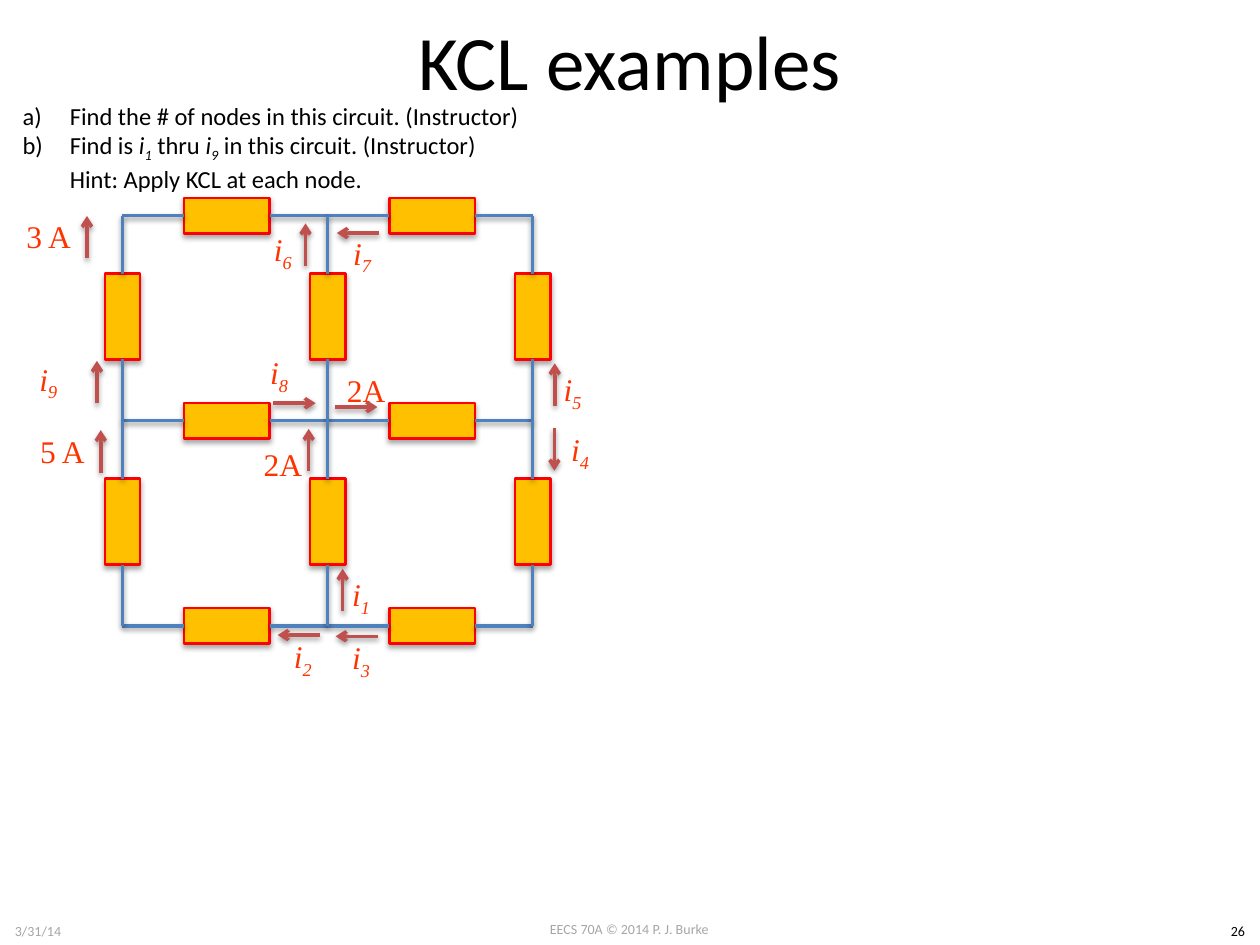
from dataclasses import dataclass

from pptx import Presentation, oxml
from pptx import util as u
from pptx.dml import color
from pptx.enum import shapes, text
from pptx.oxml import ns

COLUMNS = [70 + 117.2 * step for step in range(3)]
ROWS = [123.2 + 117.2 * step for step in range(3)]
RESISTOR_LENGTH, RESISTOR_WIDTH = 49, 20.2
GAP_BEFORE = {"across": 35.2, "down": 33.2}
ARROW_LENGTH = 24.2
DIRECTIONS = {"up": (0, -1), "down": (0, 1), "left": (-1, 0), "right": (1, 0)}
CENTER, MIDDLE = text.PP_ALIGN.CENTER, text.MSO_ANCHOR.MIDDLE


@dataclass
class Span:
    words: str
    italic: bool = False
    lowered: bool = False


@dataclass
class Current:
    name: str
    subscript: str
    label: tuple[float, float]
    tail: tuple[float, float]
    direction: str


CURRENTS = [
    Current("3 A", "", (5.8, 117.4), (49.7, 147.6), "up"),
    Current("5 A", "", (13.7, 240.5), (57.6, 270), "up"),
    Current("i", "9", (0, 195.8), (55.4, 230.4), "up"),
    Current("i", "8", (131.8, 192.2), (156.2, 230.4), "right"),
    Current("i", "7", (179.3, 123.8), (216.7, 133.2), "left"),
    Current("2A", "", (139.7, 247.7), (176.4, 269.3), "up"),
    Current("2A", "", (187.2, 205.2), (191.5, 232.6), "right"),
    Current("i", "6", (133.9, 121.7), (174.6, 151.9), "up"),
    Current("i", "5", (299.5, 201.6), (317, 231.8), "up"),
    Current("i", "4", (303.8, 236.2), (316.8, 244.8), "down"),
    Current("i", "3", (178.6, 355), (216, 363.6), "left"),
    Current("i", "2", (145.4, 354.2), (182.9, 362.9), "left"),
    Current("i", "1", (178.6, 319), (195.8, 349.2), "up"),
]
QUESTIONS = [
    [Span("Find the # of nodes in this circuit. (Instructor)")],
    [
        Span("Find is "), Span("i", True), Span("1", True, True),
        Span(" thru "), Span("i", True), Span("9", True, True),
        Span(" in this circuit. (Instructor) \nHint: Apply KCL at each node."),
    ],
]


def rgb(value: str) -> color.RGBColor:
    return color.RGBColor.from_string(value)


def points(*values: float) -> list[u.Pt]:
    return [u.Pt(value) for value in values]


def set_values(target, values: dict) -> None:
    for name, value in values.items():
        setattr(target, name, value)


def add_shadow(item, distance: float, opacity: int) -> None:
    item._element.spPr.append(oxml.parse_xml(
        f'<a:effectLst {ns.nsdecls("a")}><a:outerShdw blurRad="{u.Pt(3.1)}" '
        f'dist="{u.Pt(distance)}" dir="5400000" rotWithShape="0">'
        f'<a:srgbClr val="000000"><a:alpha val="{opacity * 1000}"/></a:srgbClr>'
        '</a:outerShdw></a:effectLst>'))


def add_line(container, start: tuple, end: tuple, line_color: str, arrow: bool = False):
    line = container.shapes.add_connector(
        shapes.MSO_CONNECTOR.STRAIGHT, *points(*start, *end))
    line.line.color.rgb = rgb(line_color)
    line.line.width = u.Pt(2)
    if arrow:
        line.line._get_or_add_ln().append(
            oxml.parse_xml(f'<a:tailEnd {ns.nsdecls("a")} type="arrow"/>'))
    add_shadow(line, 1.6, 38)
    return line


def add_branch(page, left: float, top: float, way: str) -> None:
    across = way == "across"
    step = COLUMNS[1] - COLUMNS[0]
    near = GAP_BEFORE[way]
    far = near + RESISTOR_LENGTH

    def place(distance: float) -> tuple[float, float]:
        return (left + distance, top) if across else (left, top + distance)

    x, y = place(near)
    half = RESISTOR_WIDTH / 2
    if across:
        frame = (x, y - half, RESISTOR_LENGTH, RESISTOR_WIDTH)
    else:
        frame = (x - half, y, RESISTOR_WIDTH, RESISTOR_LENGTH)
    branch = page.shapes.add_group_shape()
    resistor = branch.shapes.add_shape(shapes.MSO_SHAPE.RECTANGLE, *points(*frame))
    resistor.fill.solid()
    resistor.fill.fore_color.rgb = rgb("FFC000")
    resistor.line.color.rgb = rgb("FF0000")
    resistor.line.width = u.Pt(1.5)
    add_shadow(resistor, 1.8, 35)
    first_side, last_side = (1, 3) if across else (0, 2)
    for start, end, side in ((0, near, first_side), (step, far, last_side)):
        wire = add_line(branch, place(start), place(end), "4F81BD")
        wire.end_connect(resistor, side)


def add_text(page, frame: tuple, paragraphs: list[list[Span]], font: dict,
             ink: str, align=None, anchor=text.MSO_ANCHOR.TOP):
    box = page.shapes.add_textbox(*points(*frame))
    set_values(box.text_frame, {"word_wrap": True, "vertical_anchor": anchor})
    for index, spans in enumerate(paragraphs):
        para = box.text_frame.paragraphs[0] if index == 0 else box.text_frame.add_paragraph()
        para.alignment = align
        for span in spans:
            for number, words in enumerate(span.words.split("\n")):
                if number:
                    para.add_line_break()
                run = para.add_run()
                run.text = words
                set_values(run.font, font | {"italic": span.italic})
                run.font.color.rgb = rgb(ink)
                if span.lowered:
                    run._r.get_or_add_rPr().set("baseline", "-25000")
    return box


def add_questions(page) -> None:
    box = add_text(page, (5.8, 54, 300.2, 58.3), QUESTIONS,
                   {"name": "Calibri", "size": u.Pt(14)}, "000000")
    set_values(box.text_frame, {
        "word_wrap": False, "auto_size": text.MSO_AUTO_SIZE.SHAPE_TO_FIT_TEXT})
    for para in box.text_frame.paragraphs:
        properties = para._p.get_or_add_pPr()
        properties.set("marL", str(u.Pt(27)))
        properties.set("indent", str(u.Pt(-27)))
        properties.append(oxml.parse_xml(
            f'<a:buAutoNum {ns.nsdecls("a")} type="alphaLcParenR"/>'))


def add_current(page, current: Current) -> None:
    x, y = current.tail
    across, down = DIRECTIONS[current.direction]
    tip = (x + across * ARROW_LENGTH, y + down * ARROW_LENGTH)
    add_line(page, current.tail, tip, "C0504D", arrow=True)
    spans = [Span(current.name, bool(current.subscript))]
    size = (44, 34.6)
    if current.subscript:
        spans.append(Span(current.subscript, True, True))
        size = (55.4, 44)
    add_text(page, (*current.label, *size), [spans],
             {"name": "Times New Roman", "size": u.Pt(18)}, "FF3300", CENTER, MIDDLE)


def main() -> None:
    deck = Presentation()
    set_values(deck, {"slide_width": u.Pt(720), "slide_height": u.Pt(540)})
    page = deck.slides.add_slide(deck.slide_layouts[6])
    small = {"name": "Calibri", "size": u.Pt(8)}
    add_text(page, (275.8, 522.7, 167.8, 17.3),
             [[Span("EECS 70A © 2014 P. J. Burke")]], small, "A6A6A6", CENTER)
    add_text(page, (694.8, 523.4, 25.2, 17.3), [[Span("26")]], small, "000000", CENTER)
    add_text(page, (36, 0, 648, 68.4), [[Span("KCL examples")]],
             {"name": "Calibri", "size": u.Pt(44)}, "000000", CENTER, MIDDLE)
    add_questions(page)
    for top in ROWS:
        for left in COLUMNS[:-1]:
            add_branch(page, left, top, "across")
    for top in ROWS[:-1]:
        for left in COLUMNS:
            add_branch(page, left, top, "down")
    for current in CURRENTS:
        add_current(page, current)
    add_text(page, (1.4, 523.4, 149, 16.6), [[Span("3/31/14")]],
             small, "A6A6A6", anchor=MIDDLE)
    deck.save("out.pptx")


if __name__ == "__main__":
    main()
